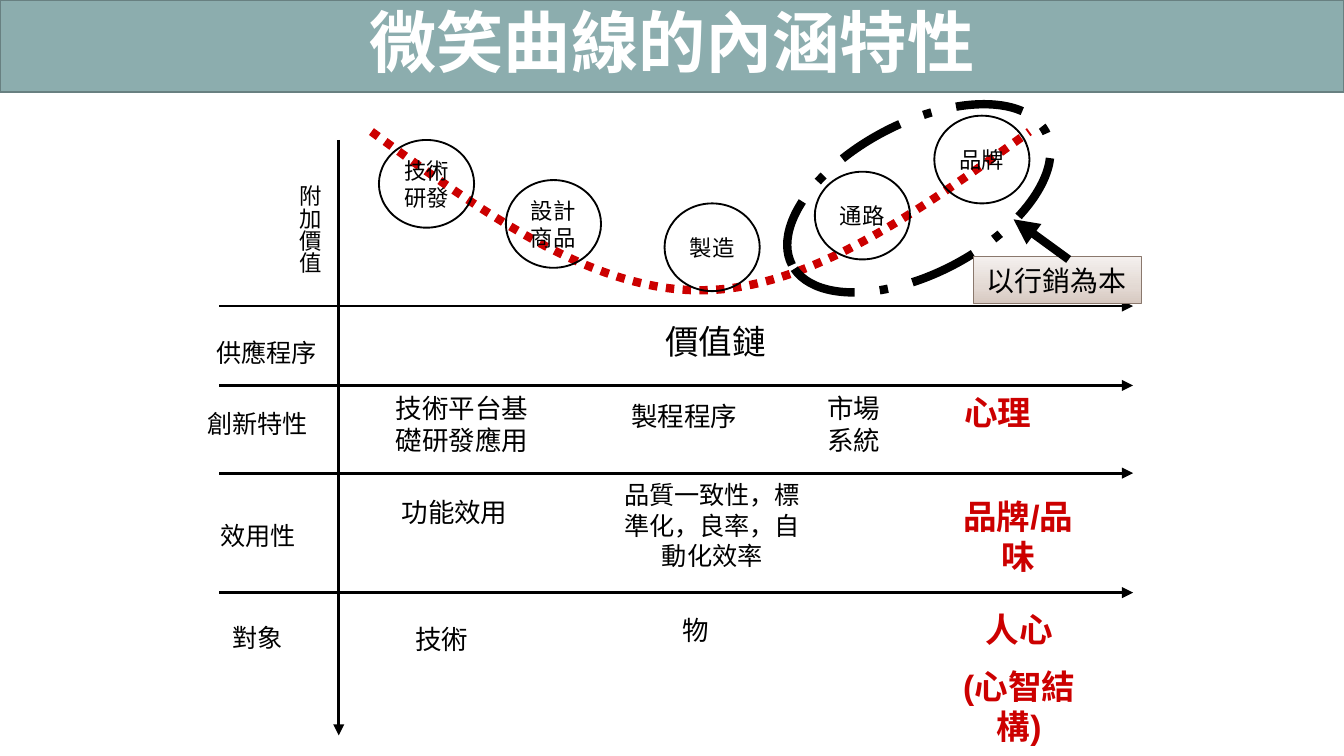
from copy import deepcopy
from pptx import Presentation
from pptx.dml.color import RGBColor
from pptx.enum.dml import MSO_LINE
from pptx.enum.shapes import MSO_CONNECTOR, MSO_SHAPE
from pptx.enum.text import MSO_ANCHOR, PP_ALIGN
from pptx.oxml.ns import qn
from pptx.oxml.xmlchemy import OxmlElement
from pptx.util import Pt

BLACK, RED = "000000", "CC0000"
STAGES = [
    ("技術\n研發", 203, 75), ("設計\n商品", 271, 96.5),
    ("製造", 356, 109), ("通路", 436.5, 92), ("品牌", 500.5, 62),
]
LABELS = [
    ("供應程序", 105, 177, 76), ("創新特性", 101, 215, 74),
    ("效用性", 101, 275, 74), ("對象", 101, 330, 74),
    ("品質一致性，標準化，良率，自動化效率", 326, 253.5, 111),
]
CELLS = [
    ("技術平台基礎研發應用", 203, 206.5, 89), ("製程程序", 322, 211, 89),
    ("市場系統", 432, 206.5, 51), ("功能效用", 199, 262, 89),
    ("技術", 211, 330, 51), ("物", 347, 325.5, 51),
]
HEARTS = [
    ("心理", 509, 206.5, 51), ("品牌/品味", 501, 262, 89),
    ("人心\n(心智結構)", 497, 322.5, 98),
]
CURVE = [(199, 70.5), (257.5, 113), (316, 155.5), (375, 155.5),
         (433.5, 155.5), (492.5, 113), (551.5, 70.5)]


def color(code):
    return RGBColor.from_string(code)


def style(frame, size, code=BLACK, bold=False, align=PP_ALIGN.CENTER):
    for num, para in enumerate(frame.paragraphs):
        para.alignment = align
        for run in para.runs:
            font = run.font
            font.name, font.size, font.bold = "Arial", Pt(size), bold
            font.color.rgb = color(code)


def stroke(shape, code, width, dash=None):
    shape.line.color.rgb = color(code)
    shape.line.width = Pt(width)
    if dash:
        shape.line.dash_style = dash


def add_label(slide, text, left, top, width, size, code=BLACK, bold=False):
    lines = text.count("\n") + 1
    box = slide.shapes.add_textbox(Pt(left), Pt(top), Pt(width), Pt(lines * size * 1.2 + 7.2))
    frame = box.text_frame
    frame.word_wrap = True
    frame.text = text
    style(frame, size, code, bold)
    for para in frame.paragraphs[1:]:
        para.space_before = Pt(size / 2)


def add_form(slide, kind, left, top, width, height, code, weight, dash=None):
    shape = slide.shapes.add_shape(kind, Pt(left), Pt(top), Pt(width), Pt(height))
    shape.shadow.inherit = False
    shape.fill.background()
    stroke(shape, code, weight, dash)
    return shape


def add_arrow(slide, start, end, width):
    line = slide.shapes.add_connector(
        MSO_CONNECTOR.STRAIGHT, *[Pt(n) for n in (*start, *end)])
    stroke(line, BLACK, width)
    tail = OxmlElement("a:tailEnd")
    tail.set("type", "triangle")
    line.line._get_or_add_ln().append(tail)
    line._element.spPr.append(OxmlElement("a:effectLst"))


def add_title(slide):
    bar = add_form(slide, MSO_SHAPE.RECTANGLE, 0, 0, 720, 49.5, "688081", 1)
    bar.fill.solid()
    bar.fill.fore_color.rgb = color("8CADAE")
    frame = bar.text_frame
    frame.margin_left = frame.margin_right = Pt(3.6)
    frame.vertical_anchor = MSO_ANCHOR.MIDDLE
    frame.text = "微笑曲線的內涵特性"
    frame.paragraphs[0].line_spacing = 0.9
    style(frame, 36, "FFFFFF", True)


def add_smile(slide):
    form = slide.shapes.build_freeform(*[Pt(n) for n in CURVE[0]])
    form.add_line_segments([(Pt(x), Pt(y)) for x, y in CURVE[1:]], close=False)
    smile = form.convert_to_shape()
    smile.shadow.inherit = False
    smile.fill.background()
    stroke(smile, RED, 4.5, MSO_LINE.ROUND_DOT)
    steps = list(smile._element.iter(qn("a:lnTo")))
    for first in range(0, len(steps), 3):
        bend = OxmlElement("a:cubicBezTo")
        steps[first].addprevious(bend)
        for step in steps[first:first + 3]:
            bend.append(step[0])
            step.getparent().remove(step)


def add_stage(slide, text, left, top):
    oval = add_form(slide, MSO_SHAPE.OVAL, left, top, 51, 47, BLACK, 1)
    frame = oval.text_frame
    frame.word_wrap = False
    frame.vertical_anchor = MSO_ANCHOR.MIDDLE
    frame.text = text
    style(frame, 12)


def add_axis(slide):
    box = slide.shapes.add_textbox(Pt(147.5), Pt(92), Pt(29), Pt(55.5))
    frame = box.text_frame
    frame.word_wrap = False
    frame.text = "附加價值"
    frame._txBody.bodyPr.set("vert", "eaVert")
    style(frame, 12, align=PP_ALIGN.LEFT)


def add_note(slide):
    note = add_form(slide, MSO_SHAPE.RECTANGLE, 521.5, 137.5, 90, 25, "8A786D", 0.75)
    fill = note.fill
    fill.gradient()
    fill.gradient_angle = 90
    stops = note._element.spPr.find(qn("a:gradFill")).find(qn("a:gsLst"))
    stops.insert(1, deepcopy(stops[0]))
    tones = [(0, "D7C9C1"), (0.35, "E3D9D3"), (1, "F4F0EE")]
    for stop, (place, code) in zip(fill.gradient_stops, tones):
        stop.position = place
        stop.color.rgb = color(code)
    frame = note.text_frame
    frame.word_wrap = False
    frame.vertical_anchor = MSO_ANCHOR.TOP
    frame.text = "以行銷為本"
    style(frame, 15, align=PP_ALIGN.LEFT)


def main():
    deck = Presentation()
    deck.slide_width, deck.slide_height = Pt(720), Pt(405)
    slide = deck.slides.add_slide(deck.slide_layouts[6])
    add_title(slide)
    add_smile(slide)
    for top in (164, 206.5, 253.5, 317.5):
        add_arrow(slide, (117.5, top), (607, top), 1.5)
    add_arrow(slide, (181.5, 75), (181.5, 394), 1.5)
    for stage in STAGES:
        add_stage(slide, *stage)
    add_label(slide, "價值鏈", 313, 168.5, 140.5, 18)
    for label in LABELS:
        add_label(slide, *label, 13.5)
    for cell in CELLS:
        add_label(slide, *cell, 14.2)
    for heart in HEARTS:
        add_label(slide, *heart, 18, RED, True)
    add_axis(slide)
    ring = add_form(slide, MSO_SHAPE.OVAL, 415.5, 66, 153.5, 80.5, BLACK, 4.5,
                    MSO_LINE.LONG_DASH_DOT)
    ring.rotation = 332.3
    add_note(slide)
    add_arrow(slide, (572.5, 139), (543, 117.5), 4.5)
    deck.save("out.pptx")


if __name__ == "__main__":
    main()
